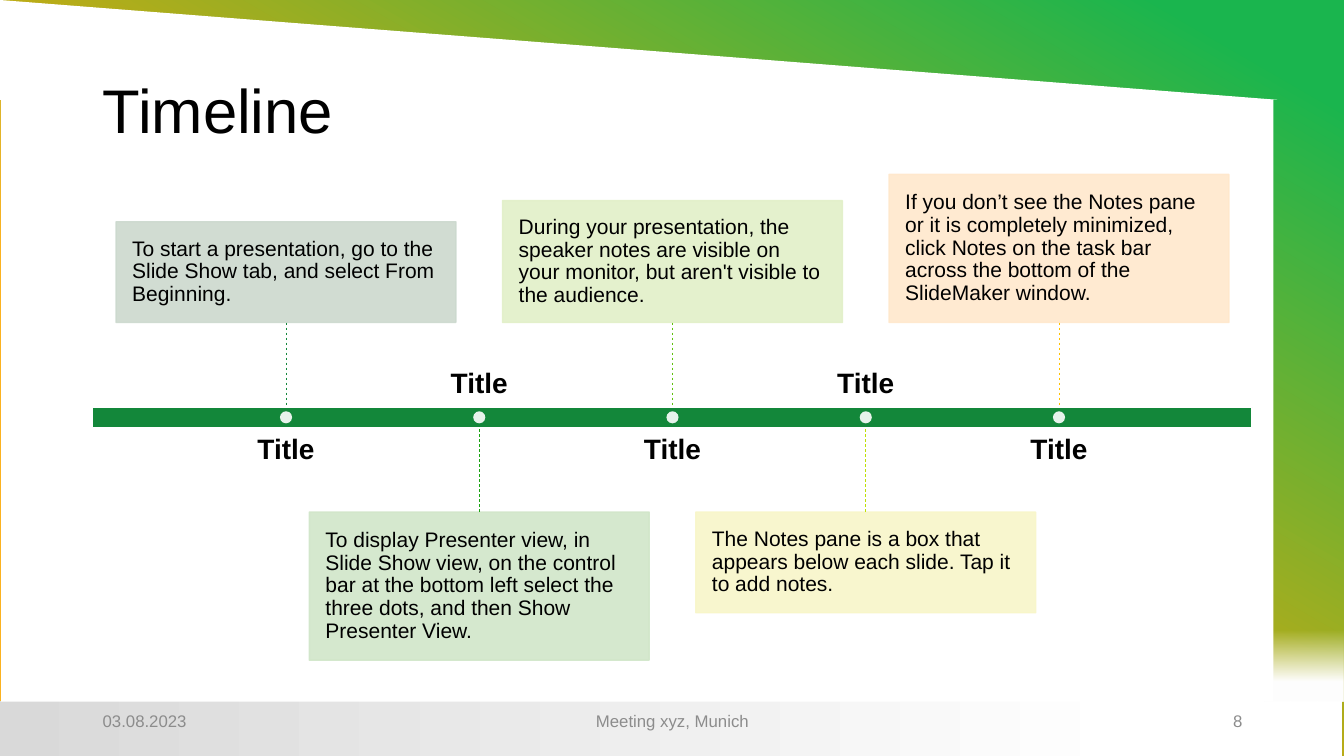
from lxml import etree
from pptx import Presentation
from pptx.dml.color import RGBColor
from pptx.enum import dml, shapes, text
from pptx.oxml import ns
from pptx.util import Inches, Pt

WHITE = RGBColor(0xFF, 0xFF, 0xFF)
BLACK = RGBColor(0, 0, 0)
GRAY = RGBColor(0x8C, 0x8C, 0x8C)
SILVER = RGBColor(0xD9, 0xD9, 0xD9)
LIME = RGBColor(0x1A, 0xB5, 0x4E)
GOLD = RGBColor(0xFB, 0xA8, 0x01)
GREEN = RGBColor(0x13, 0x87, 0x3A)

# wording, box height, box colour, line colour
MILESTONES = [
    ("To start a presentation, go to the Slide Show tab, and select From Beginning.",
     1.0, RGBColor(0xCC, 0xD9, 0xCE), GREEN),
    ("To display Presenter view, in Slide Show view, on the control bar at the "
     "bottom left select the three dots, and then Show Presenter View.",
     1.47, RGBColor(0xD1, 0xE6, 0xC9), RGBColor(0x19, 0xA3, 0x11)),
    ("During your presentation, the speaker notes are visible on your monitor, "
     "but aren't visible to the audience.",
     1.21, RGBColor(0xE2, 0xF0, 0xC8), RGBColor(0x5E, 0xC0, 0x0D)),
    ("The Notes pane is a box that appears below each slide. Tap it to add notes.",
     1.0, RGBColor(0xF8, 0xF6, 0xC9), RGBColor(0xBF, 0xDF, 0x07)),
    ("If you don’t see the Notes pane or it is completely minimized, click Notes "
     "on the task bar across the bottom of the SlideMaker window.",
     1.47, RGBColor(0xFF, 0xE8, 0xCC), RGBColor(0xFF, 0xC0, 0x00)),
]
LABEL = "Title"
LEFT, WIDTH = 0.92, 11.5
FOOTER = [
    ("03.08.2023", LEFT, 3, text.PP_ALIGN.LEFT),
    ("Meeting xyz, Munich", 4.42, 4.5, text.PP_ALIGN.CENTER),
    ("8", 9.42, 3, text.PP_ALIGN.RIGHT),
]
BAR_TOP, BAR_HEIGHT = 4.04, 0.2
BAR_BOTTOM = BAR_TOP + BAR_HEIGHT
STEM = 0.84
BOX_WIDTH, BOX_INSET = 3.37, 0.16
LABEL_WIDTH, LABEL_HEIGHT, LABEL_GAP = 3.06, 0.56, 0.08
DOT = 0.12

RECT = shapes.MSO_SHAPE.RECTANGLE
TOP, MIDDLE, BOTTOM = (text.MSO_ANCHOR.TOP, text.MSO_ANCHOR.MIDDLE,
                       text.MSO_ANCHOR.BOTTOM)


def set_alpha(fill_parent, percent):
    """Make every RGB colour inside an element partly transparent."""
    for color in fill_parent.iter(ns.qn("a:srgbClr")):
        etree.SubElement(color, ns.qn("a:alpha"), val=str(percent * 1000))


def add_shape(page, kind, left, top, width, height, color=None):
    shape = page.shapes.add_shape(
        kind, Inches(left), Inches(top), Inches(width), Inches(height))
    shape.shadow.inherit = False
    shape.line.fill.background()
    if color is not None:
        shape.fill.solid()
        shape.fill.fore_color.rgb = color
    return shape


def fill_gradient(shape, stops, angle=0):
    """Fill with two (position, colour) stops; angle runs counter-clockwise."""
    shape.fill.gradient()
    shape.fill.gradient_angle = angle
    for stop, (position, color) in zip(shape.fill.gradient_stops, stops):
        stop.position = position
        stop.color.rgb = color


def write(shape, wording, size, color=BLACK, align=text.PP_ALIGN.LEFT,
          anchor=MIDDLE, inset=None, spacing=None, bold=False):
    frame = shape.text_frame
    frame.word_wrap = True
    frame.vertical_anchor = anchor
    if inset is not None:
        frame.margin_left = frame.margin_right = Inches(inset)
        frame.margin_top = frame.margin_bottom = Inches(inset)
    para = frame.paragraphs[0]
    para.text = wording
    para.alignment = align
    para.line_spacing = spacing
    para.font.name = "Arial"
    para.font.size = Pt(size)
    para.font.bold = bold
    para.font.color.rgb = color


def add_text(page, left, top, width, height, wording, size, **style):
    box = page.shapes.add_textbox(
        Inches(left), Inches(top), Inches(width), Inches(height))
    write(box, wording, size, **style)


def draw_backdrop(page):
    backdrop = add_shape(page, RECT, 0, 0, 13.33, 7.5)
    fill_gradient(backdrop, [(0.07, LIME), (0.67, GOLD)], 240)
    footer_band = add_shape(page, RECT, -0.01, 6.95, 13.32, 0.55)
    fill_gradient(footer_band, [(0, SILVER), (0.85, WHITE)])
    fade = add_shape(page, RECT, 12.58, 6.22, 0.7, 0.78)
    fade.rotation = 270
    fill_gradient(fade, [(0.28, WHITE), (1, WHITE)])
    set_alpha(fade.fill.gradient_stops[1]._gs, 0)
    add_shape(page, RECT, 0.01, 0.99, 12.62, 5.97, WHITE)
    add_shape(page, shapes.MSO_SHAPE.RIGHT_TRIANGLE, 0, 0, 12.67, 0.99, WHITE)


def draw_milestone(page, bar, center, above, wording, height, color, stem_color):
    """Draw a box on one side of the bar and its label on the other."""
    if above:
        bar_edge, box_edge = BAR_TOP, BAR_TOP - STEM
        box_top, box_side, bar_side = box_edge - height, 2, 0
        label_top, label_anchor = BAR_BOTTOM + LABEL_GAP, TOP
    else:
        bar_edge, box_edge = BAR_BOTTOM, BAR_BOTTOM + STEM
        box_top, box_side, bar_side = box_edge, 0, 2
        label_top, label_anchor = BAR_TOP - LABEL_GAP - LABEL_HEIGHT, BOTTOM

    add_text(page, center - LABEL_WIDTH / 2, label_top, LABEL_WIDTH, LABEL_HEIGHT,
             LABEL, 20, align=text.PP_ALIGN.CENTER, anchor=label_anchor,
             inset=0, spacing=0.9, bold=True)

    box = add_shape(page, RECT, center - BOX_WIDTH / 2, box_top,
                    BOX_WIDTH, height, color)
    box.line.color.rgb = color
    box.line.width = Pt(1)
    set_alpha(box._element.spPr, 90)
    write(box, wording, 15, inset=BOX_INSET, spacing=0.9)

    stem = page.shapes.add_connector(
        shapes.MSO_CONNECTOR.STRAIGHT, Inches(center), Inches(box_edge),
        Inches(center), Inches(bar_edge))
    stem.begin_connect(box, box_side)
    if abs(center - LEFT - WIDTH / 2) < 0.01:
        stem.end_connect(bar, bar_side)
    stem.line.color.rgb = stem_color
    stem.line.width = Pt(0.5)
    stem.line.dash_style = dml.MSO_LINE.DASH
    etree.SubElement(stem._element.spPr, ns.qn("a:effectLst"))

    dot = add_shape(page, shapes.MSO_SHAPE.OVAL, center - DOT / 2,
                    BAR_TOP + (BAR_HEIGHT - DOT) / 2, DOT, DOT, WHITE)
    set_alpha(dot._element.spPr, 90)


def main():
    deck = Presentation()
    deck.slide_width, deck.slide_height = Inches(13.33), Inches(7.5)
    page = deck.slides.add_slide(deck.slide_layouts[6])
    draw_backdrop(page)
    add_text(page, LEFT, 0.4, WIDTH, 1.45, "Timeline", 44, spacing=0.9)
    for wording, left, width, align in FOOTER:
        add_text(page, left, 6.95, width, 0.4, wording, 12, color=GRAY, align=align)

    bar = add_shape(page, RECT, LEFT, BAR_TOP, WIDTH, BAR_HEIGHT, GREEN)
    bar.line.color.rgb = WHITE
    bar.line.width = Pt(1)
    step = WIDTH / (len(MILESTONES) + 1)
    for index, milestone in enumerate(MILESTONES):
        draw_milestone(page, bar, LEFT + step * (index + 1), index % 2 == 0, *milestone)
    deck.save("out.pptx")


if __name__ == "__main__":
    main()
